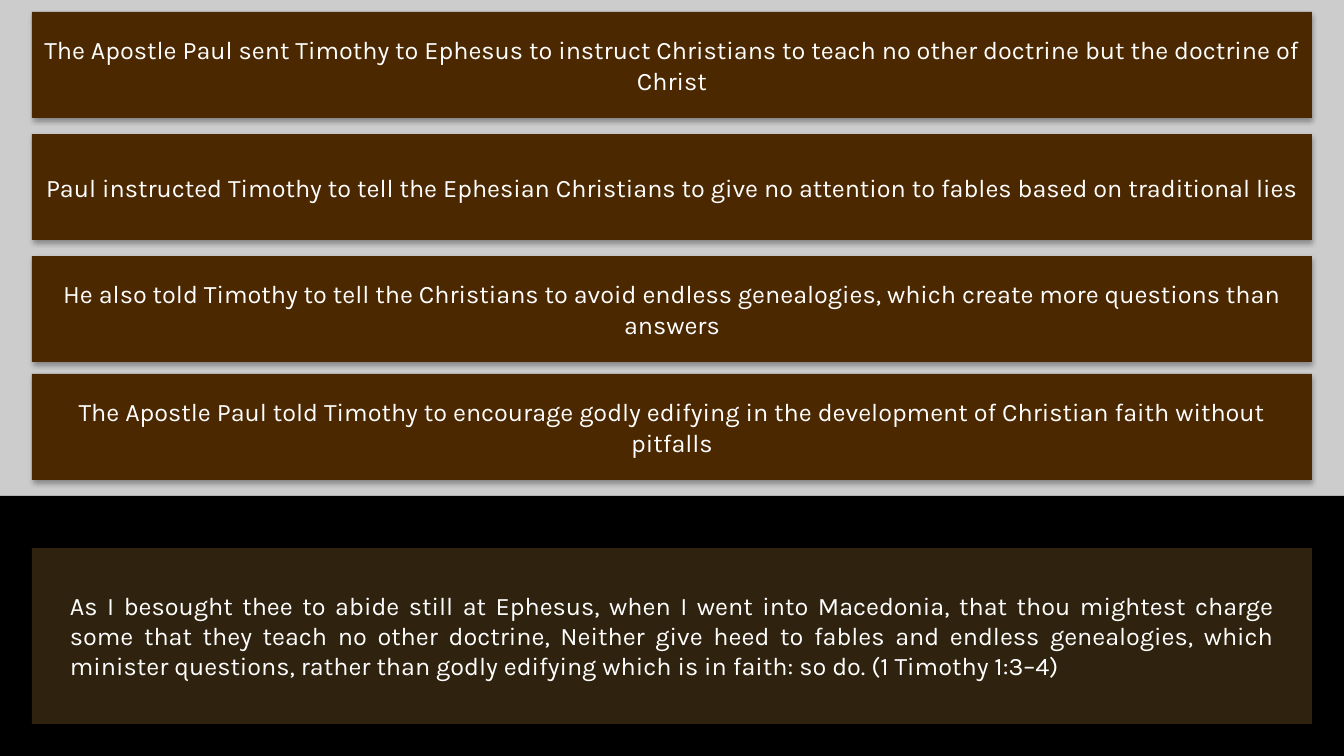
import pptx
import pptx.dml.color
import pptx.enum.shapes
import pptx.enum.text
import pptx.oxml.ns
import pptx.util
from lxml import etree

# Lengths in px; the slide is 1344 px wide
SLIDE_W, SLIDE_H = 1344, 756
EMU_PER_PX = 12192000 / SLIDE_W
BAND_TOP = 496
PANEL_LEFT, PANEL_W = 32, 1280
LESSON_H = 106

COLORS = {
    "black": "000000",
    "lesson": "4B2800",
    "verse": "2F220E",
    "text": "FFFFFF",
}

# (top, text)
LESSONS = [
    (12, "The Apostle Paul sent Timothy to Ephesus to instruct Christians to teach "
         "no other doctrine but the doctrine of Christ"),
    (134, "Paul instructed Timothy to tell the Ephesian Christians to give no "
          "attention to fables based on traditional lies"),
    (256, "He also told Timothy to tell the Christians to avoid endless genealogies, "
          "which create more questions than answers"),
    (374, "The Apostle Paul told Timothy to encourage godly edifying in the "
          "development of Christian faith without pitfalls"),
]
VERSE = (
    "As I besought thee to abide still at Ephesus, when I went into Macedonia, "
    "that thou mightest charge some that they teach no other doctrine, Neither "
    "give heed to fables and endless genealogies, which minister questions, rather "
    "than godly edifying which is in faith: so do. (1 Timothy 1:3–4)"
)


def emu(*lengths):
    return [round(length * EMU_PER_PX) for length in lengths]


def add_panel(slide, box, color):
    panel = slide.shapes.add_shape(
        pptx.enum.shapes.MSO_SHAPE.RECTANGLE, *emu(*box))
    panel.fill.solid()
    panel.fill.fore_color.rgb = pptx.dml.color.RGBColor.from_string(COLORS[color])
    panel.line.fill.background()
    panel.shadow.inherit = False
    return panel


def set_opacity(panel, percent):
    color = panel._element.spPr.find(".//" + pptx.oxml.ns.qn("a:srgbClr"))
    etree.SubElement(color, pptx.oxml.ns.qn("a:alpha"), val=str(percent * 1000))


def drop_shadow(panel):
    """Add a soft black shadow straight below the panel."""
    qn = pptx.oxml.ns.qn
    effects = panel._element.spPr.find(qn("a:effectLst"))
    shadow = etree.SubElement(
        effects, qn("a:outerShdw"), blurRad=str(pptx.util.Pt(3.5)),
        dist=str(pptx.util.Pt(2.2)), dir="5400000", algn="ctr", rotWithShape="0")
    color = etree.SubElement(shadow, qn("a:srgbClr"), val=COLORS["black"])
    etree.SubElement(color, qn("a:alpha"), val="32000")


def write(frame, text, alignment):
    frame.word_wrap = True
    paragraph = frame.paragraphs[0]
    paragraph.text = text
    paragraph.alignment = alignment
    paragraph.font.name = "Karla"
    paragraph.font.size = pptx.util.Pt(18)
    paragraph.font.color.rgb = pptx.dml.color.RGBColor.from_string(COLORS["text"])


def main():
    align = pptx.enum.text.PP_ALIGN
    deck = pptx.Presentation()
    deck.slide_width, deck.slide_height = emu(SLIDE_W, SLIDE_H)
    slide = deck.slides.add_slide(deck.slide_layouts[6])

    backdrop = add_panel(slide, (0, 0, SLIDE_W, SLIDE_H), "black")
    set_opacity(backdrop, 20)
    add_panel(slide, (0, BAND_TOP, SLIDE_W, SLIDE_H - BAND_TOP), "black")

    drop_shadow(add_panel(slide, (PANEL_LEFT, 548, PANEL_W, 176), "verse"))
    verse = slide.shapes.add_textbox(*emu(60, 585, 1224, 102))
    write(verse.text_frame, VERSE, align.JUSTIFY)
    verse.text_frame.auto_size = pptx.enum.text.MSO_AUTO_SIZE.SHAPE_TO_FIT_TEXT

    for top, text in LESSONS:
        lesson = add_panel(slide, (PANEL_LEFT, top, PANEL_W, LESSON_H), "lesson")
        drop_shadow(lesson)
        write(lesson.text_frame, text, align.CENTER)
        lesson.text_frame.vertical_anchor = pptx.enum.text.MSO_ANCHOR.MIDDLE

    deck.save("out.pptx")


if __name__ == "__main__":
    main()
